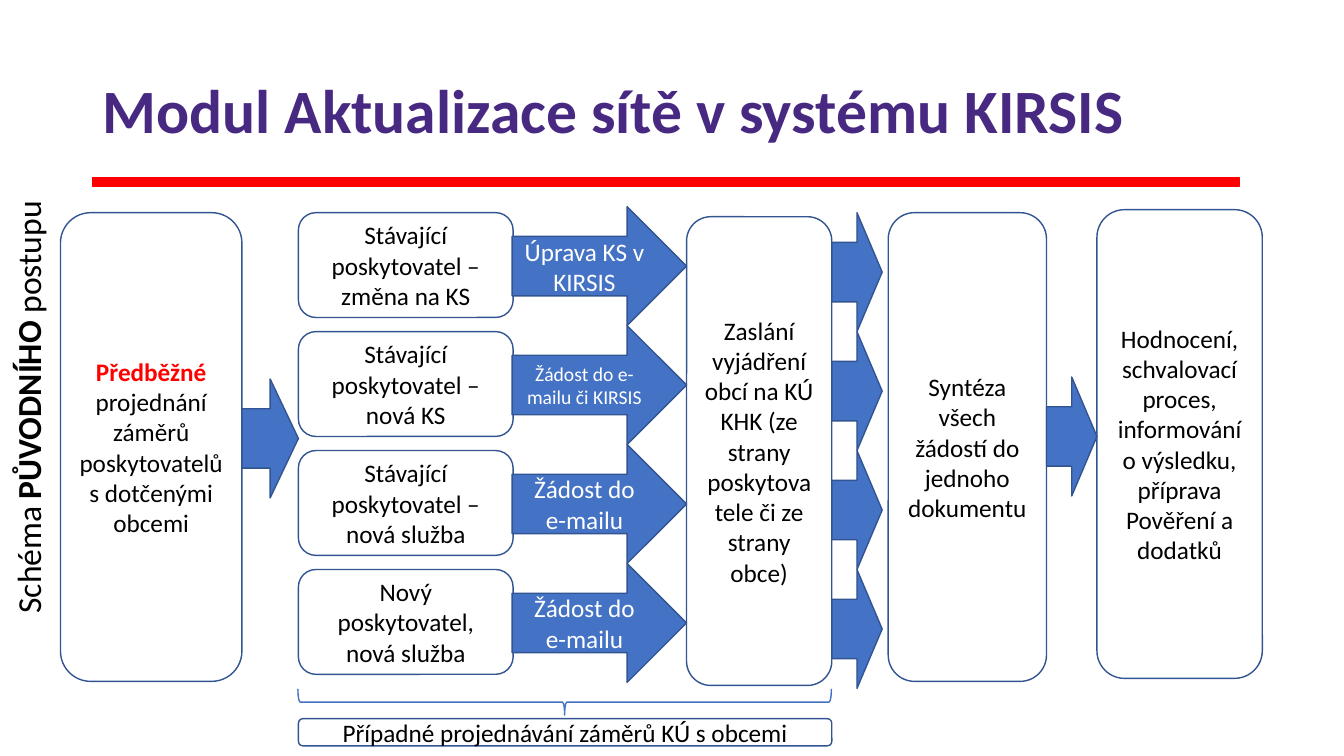
from pptx import Presentation
from pptx.dml.color import RGBColor
from pptx.enum import shapes, text
from pptx.util import Inches, Pt

BLACK = RGBColor(0, 0, 0)
WHITE = RGBColor(255, 255, 255)
RED = RGBColor(255, 0, 0)
PURPLE = RGBColor(0x47, 0x29, 0x82)
BLUE = RGBColor(0x44, 0x72, 0xC4)
EDGE = RGBColor(0x32, 0x54, 0x91)
KIND = shapes.MSO_SHAPE

TITLE = "Modul Aktualizace sítě v systému KIRSIS"
# Runs are (text, bold, colour)
SIDE = [("Schéma ", False, BLACK), ("PŮVODNÍHO", True, BLACK),
        (" postupu", False, BLACK)]
# Provider, request, request size
ROWS = [
    ("Stávající poskytovatel – změna na KS", "Úprava KS v KIRSIS", 18),
    ("Stávající poskytovatel – nová KS", "Žádost do e-mailu či KIRSIS", 14),
    ("Stávající poskytovatel – nová služba", "Žádost do e-mailu", 18),
    ("Nový poskytovatel, nová služba", "Žádost do e-mailu", 18),
]
# Left, top, width, runs
STAGES = [
    (0.6, 2.11, 1.8, [
        ("Předběžné", True, RED),
        (" projednání záměrů poskytovatelů s dotčenými obcemi", False, BLACK)]),
    (6.81, 2.15, 1.44, [
        ("Zaslání vyjádření obcí na KÚ KHK (ze strany poskytovatele "
         "či ze strany obce)", False, BLACK)]),
    (8.81, 2.11, 1.57, [
        ("Syntéza všech žádostí do jednoho dokumentu", False, BLACK)]),
    (10.88, 2.08, 1.64, [
        ("Hodnocení, schvalovací proces, informování o výsledku, "
         "příprava Pověření a dodatků", False, BLACK)]),
]
LINKS = [(2.4, 3.76, 0.56), (10.38, 3.74, 0.5)]
NOTE = "Případné projednávání záměrů KÚ s obcemi"
TOP, PITCH, TALL = 2.11, 1.18, 4.65
LEFT, SPAN = 2.96, 5.29

deck = Presentation()
deck.slide_width, deck.slide_height = Inches(13.33), Inches(7.5)
slide = deck.slides.add_slide(deck.slide_layouts[5])


def write(frame, runs, size, align):
    frame.word_wrap = True
    para = frame.paragraphs[0]
    para.alignment = align
    para.font.size, para.font.name = Pt(size), "Calibri"
    for words, bold, color in runs:
        run = para.add_run()
        run.text = words
        run.font.bold = bold
        run.font.color.rgb = color


def draw(kind, box, fill=None, line=EDGE, runs=(), size=18):
    shape = slide.shapes.add_shape(kind, *map(Inches, box))
    shape.shadow.inherit = False
    if fill is None:
        shape.fill.background()
    else:
        shape.fill.solid()
        shape.fill.fore_color.rgb = fill
    shape.line.color.rgb = line
    shape.line.width = Pt(1)
    if runs:
        shape.text_frame.vertical_anchor = text.MSO_ANCHOR.MIDDLE
        write(shape.text_frame, runs, size, text.PP_ALIGN.CENTER)
    return shape


def arrow(left, top, width, runs=(), size=18):
    draw(KIND.RIGHT_ARROW, (left, top, width, PITCH), BLUE, EDGE, runs, size)


title = slide.shapes.title
title.left, title.top, title.width, title.height = map(
    Inches, (0.92, 0.4, 11.5, 1.45))
title.text_frame.vertical_anchor = text.MSO_ANCHOR.MIDDLE
write(title.text_frame, [(TITLE, True, PURPLE)], 44, text.PP_ALIGN.LEFT)
title.text_frame.paragraphs[0].line_spacing = 0.9
draw(KIND.RECTANGLE, (0.92, 1.76, 11.37, 0.09), RED, RED)

for i, (who, what, size) in enumerate(ROWS):
    top = TOP + i * PITCH
    draw(KIND.ROUNDED_RECTANGLE, (LEFT, top, 2.13, 1.04),
         runs=[(who, False, BLACK)])
    arrow(5.08, top - 0.06, 1.73, [(what, False, WHITE)], size)
    arrow(8.25, top, 0.5)

for left, top, width, runs in STAGES:
    draw(KIND.ROUNDED_RECTANGLE, (left, top, width, TALL), runs=runs)
for link in LINKS:
    arrow(*link)

side = slide.shapes.add_textbox(*map(Inches, (-2.06, 3.6, 4.67, 0.5)))
side.rotation = 270
write(side.text_frame, SIDE, 24, text.PP_ALIGN.LEFT)

brace = draw(KIND.LEFT_BRACE, (5.47, 4.32, 0.26, SPAN), line=BLUE)
brace.rotation = 270
draw(KIND.ROUNDED_RECTANGLE, (LEFT, 7.13, SPAN, 0.27),
     runs=[(NOTE, False, BLACK)])

deck.save("out.pptx")
